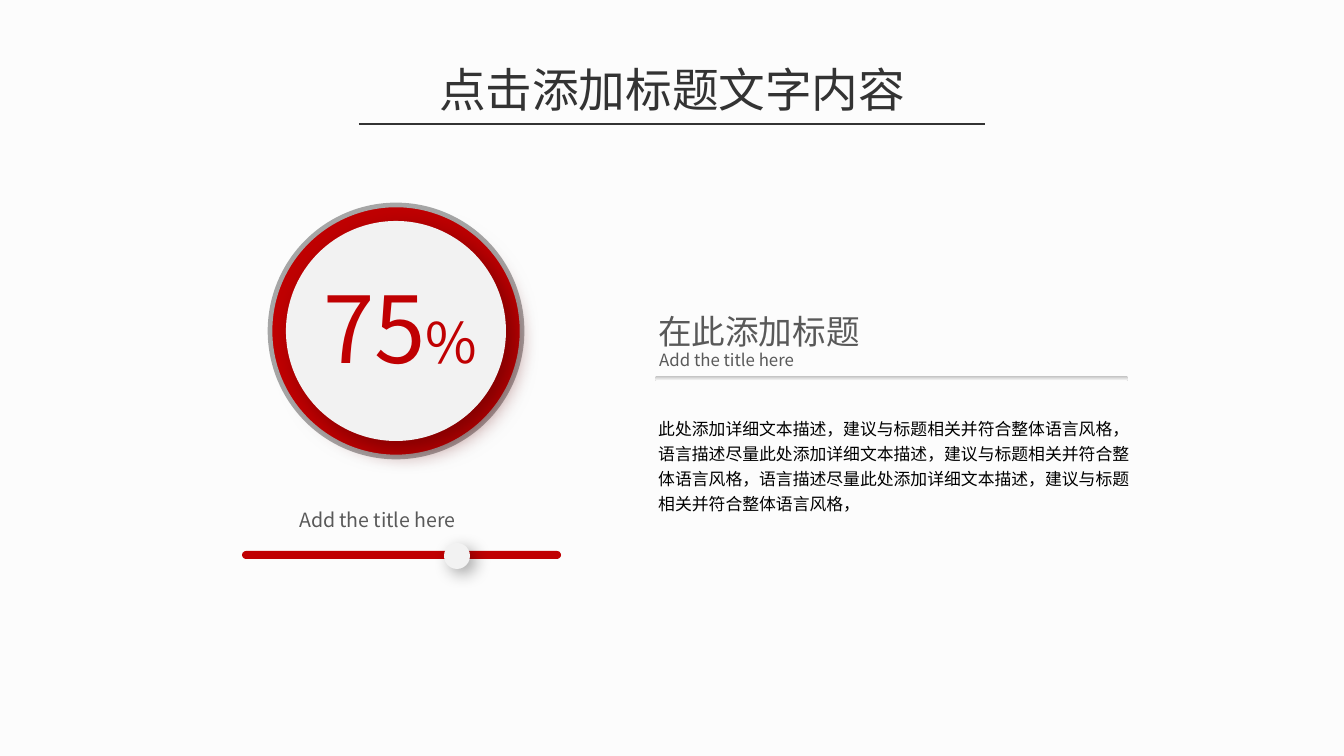
from lxml.etree import SubElement
from pptx import Presentation
from pptx.dml.color import RGBColor
from pptx.enum.shapes import MSO_CONNECTOR, MSO_SHAPE
from pptx.enum.text import MSO_ANCHOR, PP_ALIGN
from pptx.oxml.ns import qn
from pptx.util import Pt

EMU_PER_PX = 914400 / 134.4
FONT = "Noto Sans CJK SC"
RED, DARK, GREY, PALE = "C00002", "333333", "595959", "F2F2F2"
BODY = (
    "此处添加详细文本描述，建议与标题相关并符合整体语言风格，"
    "语言描述尽量此处添加详细文本描述，建议与标题相关并符合整体语言风格，"
    "语言描述尽量此处添加详细文本描述，建议与标题相关并符合整体语言风格，"
)
SHAPES = [
    {"kind": MSO_SHAPE.OVAL, "box": (270, 205, 252, 252), "fill": RED, "line": ("A6A6A6", 2.5)},
    {"kind": MSO_SHAPE.OVAL, "box": (286, 221, 220, 220), "fill": PALE, "shadow": ("600001", 64, 13, 7)},
    {"kind": MSO_SHAPE.ROUNDED_RECTANGLE, "box": (655, 376, 473, 5), "fill": ("BFBFBF", "FFFFFF")},
    {"kind": MSO_SHAPE.ROUNDED_RECTANGLE, "box": (242, 551, 319, 8), "fill": RED},
    {"kind": MSO_SHAPE.OVAL, "box": (444, 543, 26, 26), "fill": PALE, "shadow": ("000000", 35, 9, 4)},
]
TEXTS = [
    {"box": (423, 54, 498, 70), "runs": [("点击添加标题文字内容", 25, DARK)], "align": PP_ALIGN.CENTER},
    {"box": (645, 304, 292, 54), "runs": [("在此添加标题", 18, GREY)], "align": PP_ALIGN.JUSTIFY},
    {"box": (646, 343, 289, 34), "runs": [("Add the title here", 9, GREY)], "align": PP_ALIGN.JUSTIFY},
    {"box": (645, 407, 500, 114), "runs": [(BODY, 9, "000000")], "spacing": 13.5},
    {"box": (286, 501, 219, 38), "runs": [("Add the title here", 10.5, GREY)], "align": PP_ALIGN.JUSTIFY},
    {"box": (310, 264, 190, 126), "runs": [("75", 49.5, RED), ("%", 30, RED)]},
]
TITLE_RULE = (359, 124, 985, 124)


def px(*lengths):
    return [round(length * EMU_PER_PX) for length in lengths]


def color(value):
    return RGBColor.from_string(value)


def add_shadow(shape, value, opacity, blur, distance):
    effects = shape._element.spPr.find(qn("a:effectLst"))
    shadow = SubElement(effects, qn("a:outerShdw"), blurRad=str(Pt(blur)), dist=str(Pt(distance)),
                        dir=str(45 * 60000), algn="tl", rotWithShape="0")
    tint = SubElement(shadow, qn("a:srgbClr"), val=value)
    SubElement(tint, qn("a:alpha"), val=str(opacity * 1000))


def add_shape(slide, kind, box, fill, line=None, shadow=None):
    shape = slide.shapes.add_shape(kind, *px(*box))
    shape.shadow.inherit = False
    if kind == MSO_SHAPE.ROUNDED_RECTANGLE:
        shape.adjustments[0] = 0.5
    if isinstance(fill, tuple):
        shape.fill.gradient()
        shape.fill.gradient_angle = 270
        for stop, value in zip(shape.fill.gradient_stops, fill):
            stop.color.rgb = color(value)
    else:
        shape.fill.solid()
        shape.fill.fore_color.rgb = color(fill)
    if line:
        shape.line.color.rgb = color(line[0])
        shape.line.width = Pt(line[1])
    else:
        shape.line.fill.background()
    if shadow:
        add_shadow(shape, *shadow)


def add_text(slide, box, runs, align=PP_ALIGN.LEFT, spacing=None):
    frame = slide.shapes.add_textbox(*px(*box)).text_frame
    frame.word_wrap = True
    frame.vertical_anchor = MSO_ANCHOR.MIDDLE
    frame.margin_top = frame.margin_bottom = 0
    paragraph = frame.paragraphs[0]
    paragraph.alignment = align
    if spacing:
        paragraph.line_spacing = Pt(spacing)
    for text, size, value in runs:
        run = paragraph.add_run()
        run.text = text
        run.font.name = FONT
        run.font.size = Pt(size)
        run.font.color.rgb = color(value)
        SubElement(run.font._element, qn("a:ea"), typeface=FONT)


def main():
    presentation = Presentation()
    presentation.slide_width, presentation.slide_height = px(1344, 756)
    slide = presentation.slides.add_slide(presentation.slide_layouts[6])
    slide.background.fill.solid()
    slide.background.fill.fore_color.rgb = color("FCFCFC")
    rule = slide.shapes.add_connector(MSO_CONNECTOR.STRAIGHT, *px(*TITLE_RULE))
    rule.line.color.rgb = color(DARK)
    rule.line.width = Pt(0.75)
    SubElement(rule._element.spPr, qn("a:effectLst"))
    for shape in SHAPES:
        add_shape(slide, **shape)
    for text in TEXTS:
        add_text(slide, **text)
    presentation.save("out.pptx")


if __name__ == "__main__":
    main()
